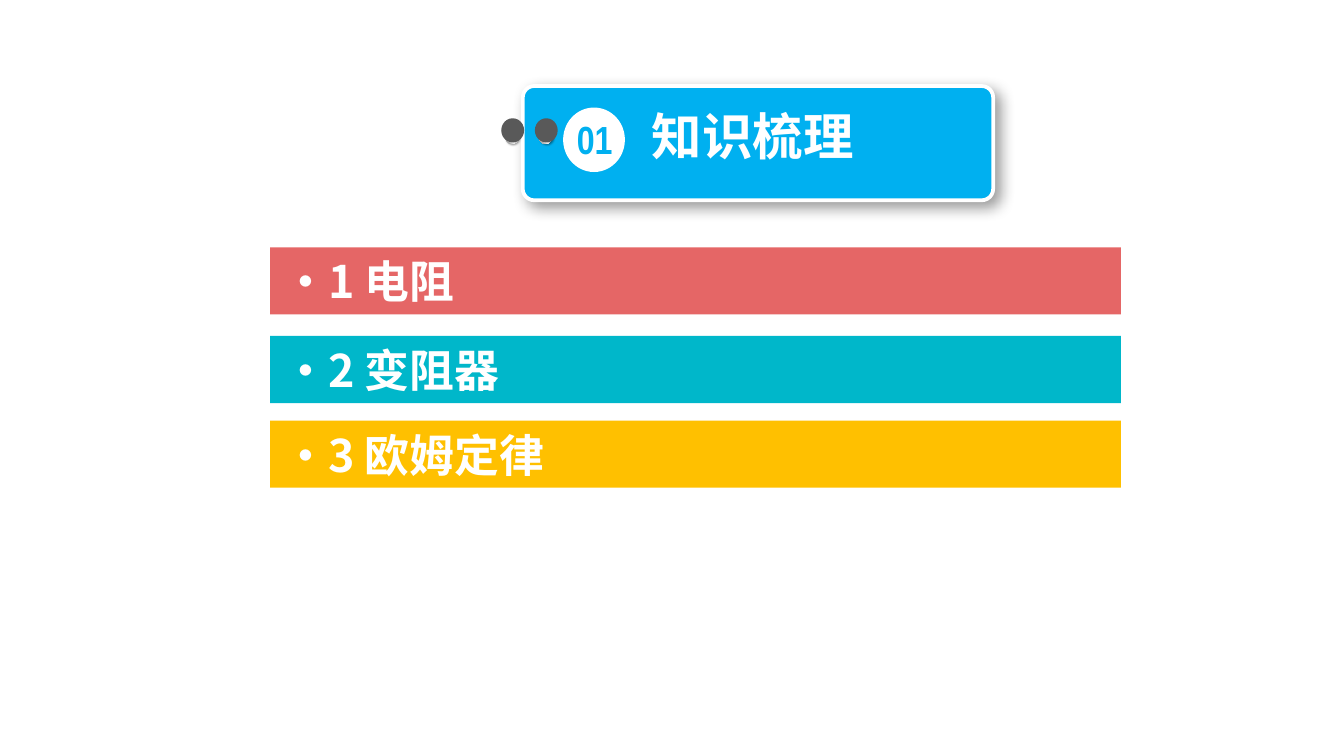
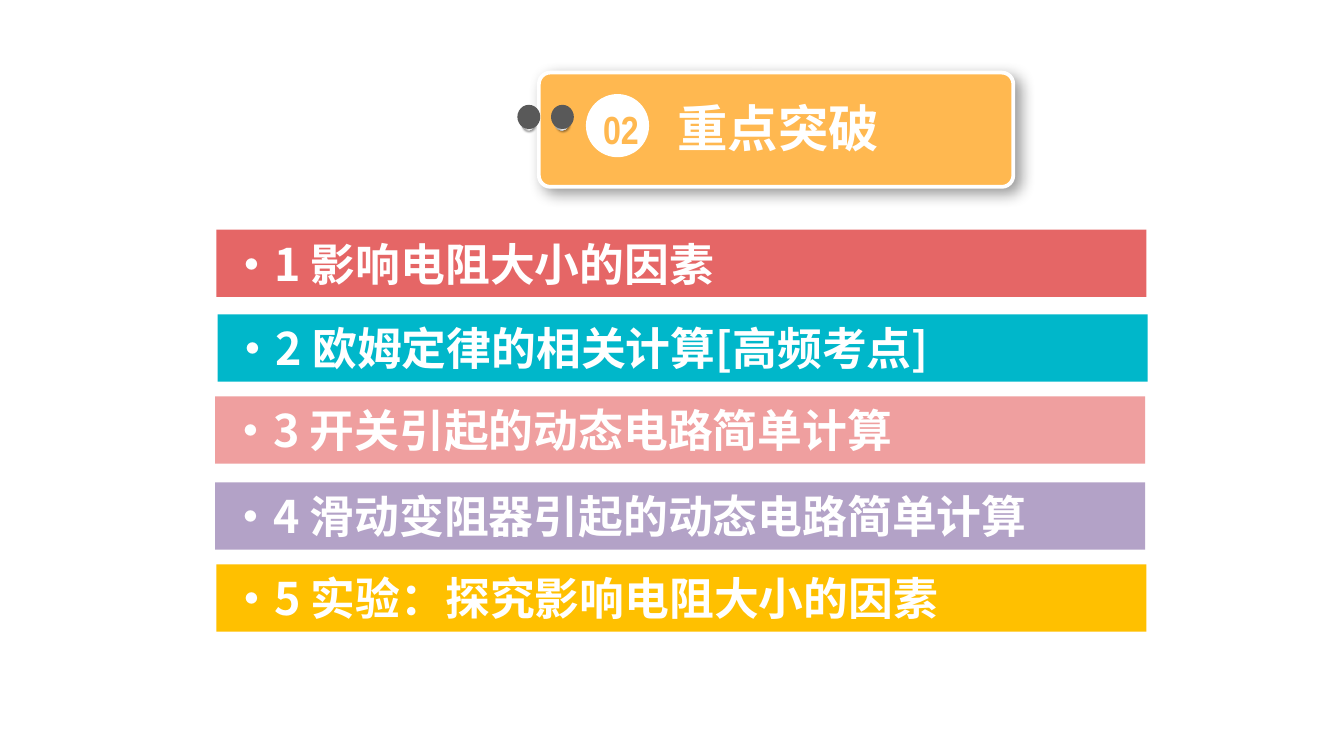
from lxml import etree
from pptx import Presentation
from pptx.dml.color import RGBColor
from pptx.enum.lang import MSO_LANGUAGE_ID
from pptx.enum.shapes import MSO_SHAPE
from pptx.enum.text import MSO_ANCHOR, PP_ALIGN
from pptx.oxml import parse_xml
from pptx.oxml.ns import nsdecls, qn
from pptx.util import Pt

RECT, ROUND, OVAL = MSO_SHAPE.RECTANGLE, MSO_SHAPE.ROUNDED_RECTANGLE, MSO_SHAPE.OVAL
LEFT, CENTER = PP_ALIGN.LEFT, PP_ALIGN.CENTER
MIDDLE = MSO_ANCHOR.MIDDLE
CHINESE = MSO_LANGUAGE_ID.SIMPLIFIED_CHINESE
SCALE = 9144
WIDE = 1000
SANS, NARROW = "Noto Sans CJK SC", "Arial Narrow"
HEX = {
    "white": "FFFFFF", "black": "000000", "dot": "595959",
    "silver": "A6A6A6", "pale": "F2F2F2",
    "blue": "00B0F0", "orange": "FFB850", "red": "E56666",
    "teal": "00B7CA", "pink": "EF9F9F", "violet": "B3A2C7", "gold": "FFC000",
}
PEARL = [(0, "white"), (17, "silver"), (35, "pale"),
         (55, "silver"), (75, "pale"), (100, "silver")]
BAR = 50

PAGES = [
    {
        "num": "01", "title": "知识梳理", "hue": "blue",
        "card": (389, 64, 350, 85), "disc": (419, 80, 46, 48),
        "label": (416, 81, 53, 45), "head": (449, 73, 222, 56),
        "width": 633,
        "bars": [
            ("电阻", "red", 201, 184),
            ("变阻器", "teal", 201, 250),
            ("欧姆定律", "gold", 201, 313),
        ],
    },
    {
        "num": "02", "title": "重点突破", "hue": "orange",
        "card": (401, 54, 353, 85), "disc": (436, 70, 47, 47),
        "label": (434, 73, 56, 45), "head": (455, 67, 248, 56),
        "width": 692,
        "bars": [
            ("影响电阻大小的因素", "red", 161, 171),
            ("欧姆定律的相关计算[高频考点]", "teal", 162, 234),
            ("开关引起的动态电路简单计算", "pink", 160, 295),
            ("滑动变阻器引起的动态电路简单计算", "violet", 160, 359),
            ("实验：探究影响电阻大小的因素", "gold", 161, 420),
        ],
    },
]


def emu(box):
    return [n * SCALE for n in box]


def rgb(hue):
    return RGBColor.from_string(HEX[hue])


def shape(slide, kind, box, hue):
    item = slide.shapes.add_shape(kind, *emu(box))
    item.shadow.inherit = False
    item.fill.solid()
    item.fill.fore_color.rgb = rgb(hue)
    item.line.fill.background()
    return item


def shade(item, blur, dist):
    effect = item._element.spPr.find(qn("a:effectLst"))
    outer = etree.SubElement(effect, qn("a:outerShdw"), blurRad=str(Pt(blur)),
                             dist=str(Pt(dist)), dir="2700000", algn="tl", rotWithShape="0")
    color = etree.SubElement(outer, qn("a:srgbClr"), val=HEX["black"])
    etree.SubElement(color, qn("a:alpha"), val="40000")


def pearl(slide, box):
    item = shape(slide, OVAL, box, "silver")
    item.rotation = 270
    stops = "".join(f'<a:gs pos="{at * 1000}"><a:srgbClr val="{HEX[hue]}"/></a:gs>'
                    for at, hue in PEARL)
    grad = parse_xml(f'<a:gradFill {nsdecls("a")}><a:gsLst>{stops}</a:gsLst>'
                     '<a:lin ang="2700000" scaled="0"/></a:gradFill>')
    props = item._element.spPr
    props.replace(props.find(qn("a:solidFill")), grad)
    shade(item, 1, 1)


def write(item, text, size, hue, font=SANS, align=LEFT):
    frame = item.text_frame
    frame.word_wrap = True
    frame.vertical_anchor = MIDDLE
    frame.margin_top = frame.margin_bottom = 0
    para = frame.paragraphs[0]
    para.alignment = align
    run = para.add_run()
    run.text = text
    run.font.size = Pt(size)
    run.font.bold = True
    run.font.name = font
    run.font.language_id = CHINESE
    run.font.color.rgb = rgb(hue)
    etree.SubElement(run._r.get_or_add_rPr(), qn("a:ea"), typeface=font)


def banner(slide, page):
    x, y, _, _ = page["card"]
    card = shape(slide, ROUND, page["card"], page["hue"])
    card.adjustments[0] = 0.1
    card.line.color.rgb = rgb("white")
    card.line.width = Pt(2)
    shade(card, 8, 4)
    for left in (x + 9, x - 16):
        pearl(slide, (left + 3, y + 33, 10, 10))
        shape(slide, OVAL, (left, y + 24, 17, 18), "dot")
    shape(slide, OVAL, page["disc"], "white")
    label = slide.shapes.add_textbox(*emu(page["label"]))
    write(label, page["num"], 21, page["hue"], NARROW, CENTER)
    head = slide.shapes.add_textbox(*emu(page["head"]))
    write(head, page["title"], 27, "white", align=CENTER)


def main():
    deck = Presentation()
    deck.slide_width = WIDE * SCALE
    deck.slide_height = deck.slide_width * 9 // 16
    for page in PAGES:
        slide = deck.slides.add_slide(deck.slide_layouts[6])
        banner(slide, page)
        for num, (text, hue, x, y) in enumerate(page["bars"], 1):
            bar = shape(slide, RECT, (x, y, page["width"], BAR), hue)
            write(bar, f"·{num} {text}", 24, "white")
    deck.save("out.pptx")


if __name__ == "__main__":
    main()
